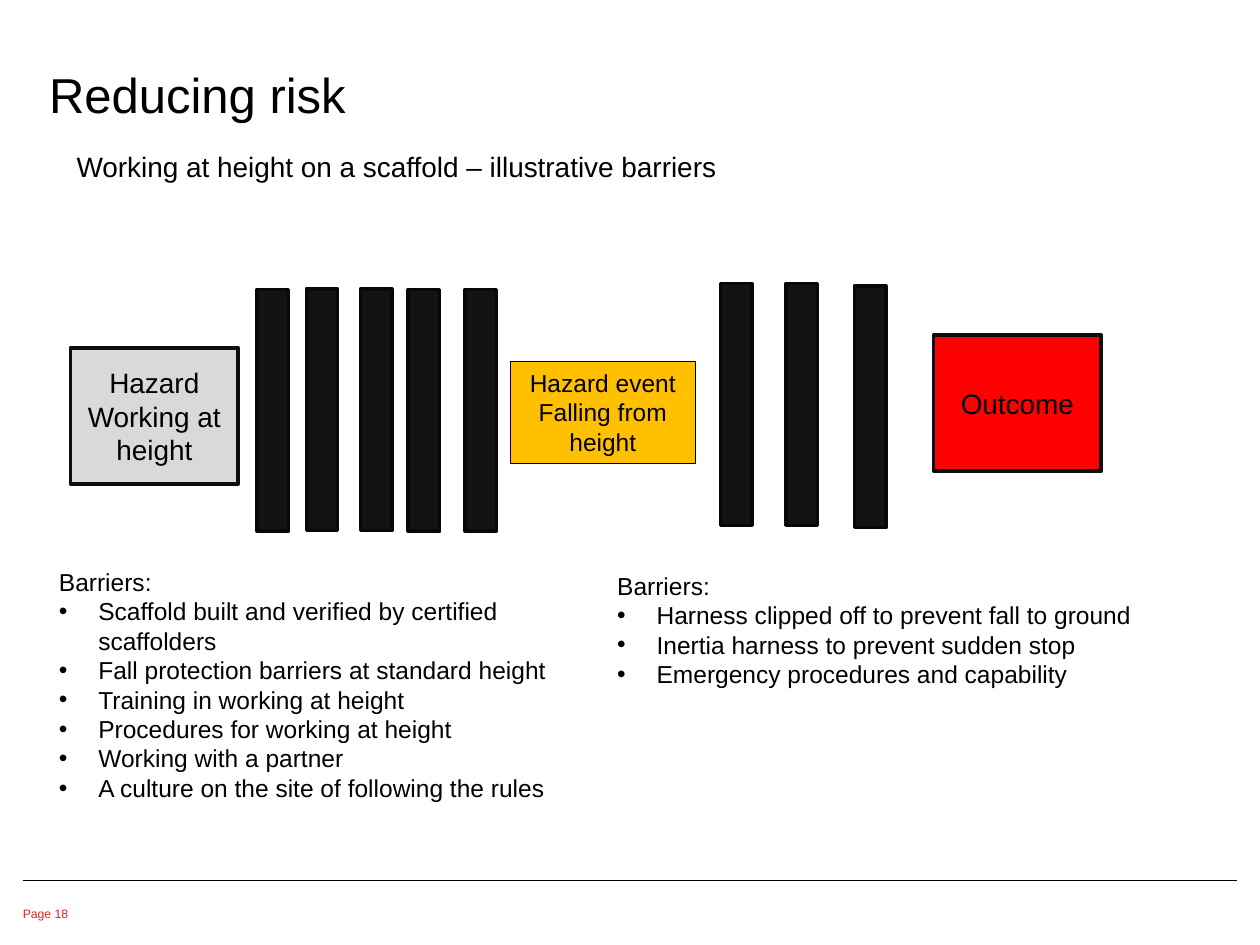
from dataclasses import dataclass

from lxml.etree import SubElement
from pptx import Presentation
from pptx.dml.color import RGBColor as Color
from pptx.enum.shapes import MSO_CONNECTOR as Connector, MSO_SHAPE as Shape
from pptx.enum.text import MSO_ANCHOR as Anchor, PP_ALIGN as Align
from pptx.oxml.ns import qn
from pptx.util import Pt


@dataclass(frozen=True)
class Theme:
    font: str = "Arial"
    text: str = "000000"
    page: str = "DC271E"
    rule: str = "000000"
    hazard: str = "D9D9D9"
    event: str = "FFC000"
    outcome: str = "FF0000"
    box_line: str = "0E0E0E"
    barrier: str = "131313"
    barrier_line: str = "080808"
    title_size: float = 28
    heading_size: float = 16
    body_size: float = 14
    page_size: float = 7
    thin: float = 0.75
    thick: float = 2


THEME = Theme()
NO_INSETS = dict.fromkeys(("margin_left", "margin_top", "margin_right", "margin_bottom"), 0)
BULLET_INDENT = Pt(22.5)
BARRIER_SIZE = (18, 138.2)
BARRIERS_BEFORE = [(146.9, 165.4), (175, 165.1), (205.9, 165.1), (233.3, 165.4), (265.7, 165.4)]
BARRIERS_AFTER = [(411.8, 162), (449.3, 162), (488.2, 163.4)]
PREVENTION = [
    "Scaffold built and verified by certified scaffolders",
    "Fall protection barriers at standard height",
    "Training in working at height",
    "Procedures for working at height",
    "Working with a partner",
    "A culture on the site of following the rules",
]
MITIGATION = [
    "Harness clipped off to prevent fall to ground",
    "Inertia harness to prevent sudden stop",
    "Emergency procedures and capability",
]


def apply_format(target, values):
    for name, value in values.items():
        setattr(target, name, value)


def write_lines(frame, lines, size, color=THEME.text, paragraph_format=None):
    for index, line in enumerate(lines):
        paragraph = frame.add_paragraph() if index else frame.paragraphs[0]
        apply_format(paragraph, paragraph_format or {})
        run = paragraph.add_run()
        run.text = line
        apply_format(run.font, {"name": THEME.font, "size": Pt(size)})
        run.font.color.rgb = Color.from_string(color)


def add_text(slide, bounds, lines, size, color=THEME.text, frame_format=None, paragraph_format=None):
    frame = slide.shapes.add_textbox(*map(Pt, bounds)).text_frame
    apply_format(frame, {"word_wrap": True, **(frame_format or {})})
    write_lines(frame, lines, size, color, paragraph_format)
    return frame


def add_bullet(paragraph):
    properties = paragraph._p.get_or_add_pPr()
    properties.set("marL", str(BULLET_INDENT))
    properties.set("indent", str(-BULLET_INDENT))
    SubElement(properties, qn("a:buFont"), typeface=THEME.font)
    SubElement(properties, qn("a:buChar"), char="•")


def add_barrier_list(slide, bounds, items):
    frame = add_text(slide, bounds, ["Barriers:", *items], THEME.body_size)
    for paragraph in frame.paragraphs[1:]:
        add_bullet(paragraph)


def add_rectangle(slide, bounds, fill, line, width):
    shape = slide.shapes.add_shape(Shape.RECTANGLE, *map(Pt, bounds))
    shape.shadow.inherit = False
    shape.fill.solid()
    shape.fill.fore_color.rgb = Color.from_string(fill)
    shape.line.color.rgb = Color.from_string(line)
    shape.line.width = Pt(width)
    return shape


def add_box(slide, bounds, lines, size, fill, line, width, anchor=Anchor.MIDDLE):
    frame = add_rectangle(slide, bounds, fill, line, width).text_frame
    apply_format(frame, {"word_wrap": True, "vertical_anchor": anchor})
    write_lines(frame, lines, size, paragraph_format={"alignment": Align.CENTER})


def add_barriers(slide, positions):
    for position in positions:
        add_rectangle(slide, (*position, *BARRIER_SIZE), THEME.barrier, THEME.barrier_line, THEME.thick)


def add_rule(slide, left, right, top):
    rule = slide.shapes.add_connector(Connector.STRAIGHT, Pt(left), Pt(top), Pt(right), Pt(top))
    rule.line.color.rgb = Color.from_string(THEME.rule)
    rule.line.width = Pt(THEME.thin)
    SubElement(rule._element.spPr, qn("a:effectLst"))


def main():
    presentation = Presentation()
    apply_format(presentation, {"slide_width": Pt(720), "slide_height": Pt(540)})
    slide = presentation.slides.add_slide(presentation.slide_layouts[6])

    add_rule(slide, 13, 707, 503.3)
    add_text(slide, (28.1, -5.8, 673.9, 76.3), ["Reducing risk"], THEME.title_size,
             frame_format={**NO_INSETS, "vertical_anchor": Anchor.BOTTOM})
    add_text(slide, (13, 517.7, 29.5, 10.8), ["Page 18"], THEME.page_size, THEME.page,
             frame_format={**NO_INSETS, "word_wrap": False})
    add_text(slide, (36.7, 82.1, 655.2, 51.8),
             ["Working at height on a scaffold – illustrative barriers"], THEME.heading_size,
             paragraph_format={"space_before": Pt(6)})

    add_box(slide, (291.6, 206.6, 105.8, 58.3), ["Hazard event Falling from height"],
            THEME.body_size, THEME.event, THEME.rule, THEME.thin, Anchor.TOP)
    add_box(slide, (40.3, 198.7, 95.8, 77.8), ["Hazard", "Working at height"],
            THEME.heading_size, THEME.hazard, THEME.box_line, THEME.thick)
    add_box(slide, (533.5, 191.5, 95.8, 77.8), ["Outcome"],
            THEME.heading_size, THEME.outcome, THEME.box_line, THEME.thick)

    add_barriers(slide, BARRIERS_BEFORE + BARRIERS_AFTER)
    add_barrier_list(slide, (26.6, 320.4, 315.4, 143.3), PREVENTION)
    add_barrier_list(slide, (345.6, 322.6, 315.4, 126), MITIGATION)

    presentation.save("out.pptx")


if __name__ == "__main__":
    main()
